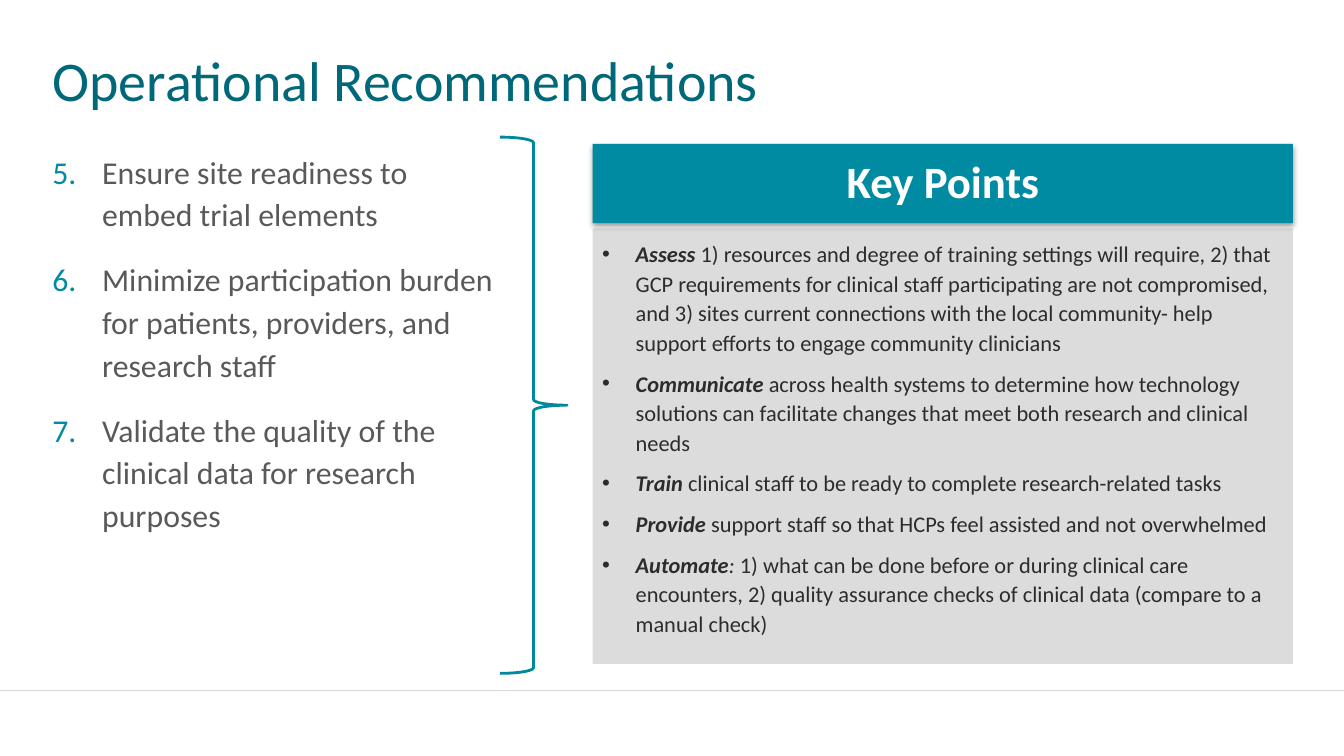
from lxml.etree import SubElement
from pptx import Presentation
from pptx.dml.color import RGBColor
from pptx.enum.shapes import MSO_CONNECTOR, MSO_SHAPE
from pptx.enum.text import MSO_ANCHOR, PP_ALIGN
from pptx.oxml.ns import qn
from pptx.util import Inches, Pt

# Content
TITLE = "Operational Recommendations"
FIRST_NUMBER = 5
RECOMMENDATIONS = [
    "Ensure site readiness to embed trial elements",
    "Minimize participation burden for patients, providers, and research staff",
    "Validate the quality of the clinical data for research purposes",
]
HEADING = "Key Points"
# Each point: bold italic lead, italic link, plain text
KEY_POINTS = [
    ("Assess", "", " 1) resources and degree of training settings will require, "
     "2) that GCP requirements for clinical staff participating are not compromised, "
     "and 3) sites current connections with the local community- help support "
     "efforts to engage community clinicians"),
    ("Communicate ", "", "across health systems to determine how technology solutions "
     "can facilitate changes that meet both research and clinical needs"),
    ("Train", "", " clinical staff to be ready to complete research-related tasks"),
    ("Provide", "", " support staff so that HCPs feel assisted and not overwhelmed"),
    ("Automate", ": ", "1) what can be done before or during clinical care encounters, "
     "2) quality assurance checks of clinical data (compare to a manual check)"),
]

# Style and layout
FONT = "Calibri"
COLORS = {"title": "006879", "teal": "008BA2", "brace": "00889E", "body": "58595B",
          "ink": "2C2C2E", "panel": "D9D9D9", "rule": "D9D9D9", "white": "FFFFFF",
          "shadow": "000000"}
WIDTH = 10
HEIGHT = WIDTH * 9 / 16
MARGIN = 0.39
PANEL_LEFT, PANEL_WIDTH = 4.41, 5.21
RULE_TOP = 5.14


def color(name):
    return RGBColor.from_string(COLORS[name])


def box(left, top, width, height):
    return [Inches(length) for length in (left, top, width, height)]


def set_frame(shape, insets=(0, 0, 0, 0), anchor=MSO_ANCHOR.TOP):
    frame = shape.text_frame
    frame.word_wrap = True
    frame.vertical_anchor = anchor
    (frame.margin_left, frame.margin_top,
     frame.margin_right, frame.margin_bottom) = [Inches(inset) for inset in insets]
    return frame


def set_font(font, size, color_name, bold=False, italic=False):
    font.name, font.size = FONT, Pt(size)
    font.bold, font.italic = bold, italic
    font.color.rgb = color(color_name)


def set_bullet(paragraph, indent, color_name, tag, **attributes):
    properties = paragraph._p.get_or_add_pPr()
    properties.set("marL", str(Inches(indent)))
    properties.set("indent", str(-Inches(indent)))
    bullet_color = SubElement(properties, qn("a:buClr"))
    SubElement(bullet_color, qn("a:srgbClr"), val=COLORS[color_name])
    SubElement(properties, qn("a:buFont"), typeface="Arial" if tag == "a:buChar" else FONT)
    SubElement(properties, qn(tag), **attributes)


def add_paragraphs(frame, count):
    return [frame.paragraphs[0]] + [frame.add_paragraph() for _ in range(count - 1)]


def add_panel(slide, top, height, color_name):
    shape = slide.shapes.add_shape(
        MSO_SHAPE.RECTANGLE, *box(PANEL_LEFT, top, PANEL_WIDTH, height))
    shape.shadow.inherit = False
    shape.fill.solid()
    shape.fill.fore_color.rgb = color(color_name)
    shape.line.fill.background()
    return shape


presentation = Presentation()
presentation.slide_width, presentation.slide_height = Inches(WIDTH), Inches(HEIGHT)
slide = presentation.slides.add_slide(presentation.slide_layouts[5])

# Footer rule
rule = slide.shapes.add_connector(
    MSO_CONNECTOR.STRAIGHT, *box(0, RULE_TOP, WIDTH, RULE_TOP))
rule.line.color.rgb = color("rule")
rule.line.width = Pt(0.75)
SubElement(rule._element.spPr, qn("a:effectLst"))

# Title
title = slide.shapes.title
title.left, title.top, title.width, title.height = box(MARGIN, 0.19, 9.16, 0.79)
frame = set_frame(title, anchor=MSO_ANCHOR.MIDDLE)
frame.text = TITLE
frame.paragraphs[0].alignment = PP_ALIGN.LEFT
set_font(frame.paragraphs[0].runs[0].font, 30, "title")

# Numbered recommendations
frame = set_frame(slide.shapes.add_textbox(*box(MARGIN, 1.1, 3.34, 3.86)))
paragraphs = add_paragraphs(frame, len(RECOMMENDATIONS))
for index, (paragraph, text) in enumerate(zip(paragraphs, RECOMMENDATIONS)):
    paragraph.text = text
    set_bullet(paragraph, 0.37, "teal", "a:buAutoNum",
               type="arabicPeriod", startAt=str(FIRST_NUMBER))
    paragraph.line_spacing = 1.12
    paragraph.space_before = Pt(6 if index else 0)
    paragraph.space_after = Pt(6)
    set_font(paragraph.runs[0].font, 17, "body")

# Key points panel
panel = add_panel(slide, 1.7, 3.24, "panel")
panel_color = panel._element.spPr.find(qn("a:solidFill")).find(qn("a:srgbClr"))
SubElement(panel_color, qn("a:alpha"), val="90000")
frame = set_frame(panel, (0.07, 0.07, 0.09, 0.1))
for paragraph, point in zip(add_paragraphs(frame, len(KEY_POINTS)), KEY_POINTS):
    set_bullet(paragraph, 0.25, "ink", "a:buChar", char="•")
    paragraph.alignment = PP_ALIGN.LEFT
    paragraph.line_spacing = 1.1
    paragraph.space_after = Pt(6)
    styles = [(True, True), (False, True), (False, False)]
    for text, (bold, italic) in zip(point, styles):
        if text:
            run = paragraph.add_run()
            run.text = text
            set_font(run.font, 12, "ink", bold, italic)

# Panel heading with a soft shadow below
header = add_panel(slide, 1.07, 0.59, "teal")
effects = header._element.spPr.find(qn("a:effectLst"))
shadow = SubElement(effects, qn("a:outerShdw"), blurRad=str(Pt(3.1)),
                    dist=str(Pt(1.6)), dir="5400000", rotWithShape="0")
shadow_color = SubElement(shadow, qn("a:srgbClr"), val=COLORS["shadow"])
SubElement(shadow_color, qn("a:alpha"), val="38000")
frame = set_frame(header, (0.19, 0.11, 0.19, 0.11), MSO_ANCHOR.MIDDLE)
frame.text = HEADING
frame.paragraphs[0].alignment = PP_ALIGN.CENTER
frame.paragraphs[0].line_spacing = 0.9
set_font(frame.paragraphs[0].runs[0].font, 24, "white", bold=True)

# Brace between the columns
brace = slide.shapes.add_shape(MSO_SHAPE.RIGHT_BRACE, *box(3.72, 1.02, 0.5, 3.99))
brace.shadow.inherit = False
brace.fill.background()
brace.line.color.rgb = color("brace")
brace.line.width = Pt(1.5)

presentation.save("out.pptx")
